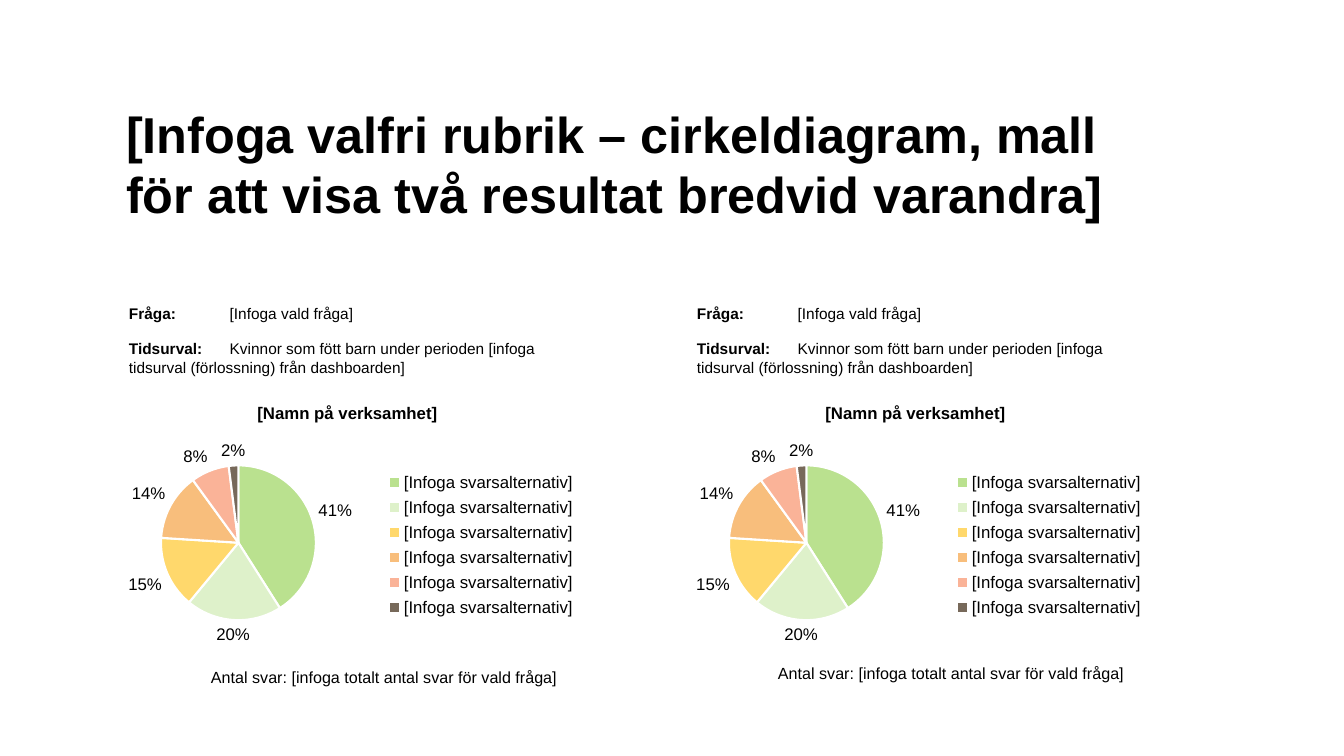
from lxml import etree
from pptx import Presentation
from pptx.chart.data import CategoryChartData
from pptx.dml.color import RGBColor
from pptx.enum.chart import XL_CHART_TYPE, XL_LABEL_POSITION, XL_LEGEND_POSITION
from pptx.enum.text import MSO_ANCHOR, MSO_AUTO_SIZE, PP_ALIGN
from pptx.oxml.ns import qn
from pptx.util import Pt

PIE = XL_CHART_TYPE.PIE
OUTSIDE_END = XL_LABEL_POSITION.OUTSIDE_END
LEGEND_BOTTOM = XL_LEGEND_POSITION.BOTTOM
TOP = MSO_ANCHOR.TOP
NO_AUTOFIT = MSO_AUTO_SIZE.NONE
LEFT, CENTER = PP_ALIGN.LEFT, PP_ALIGN.CENTER

BLACK = RGBColor(0x00, 0x00, 0x00)
WHITE = RGBColor(0xFF, 0xFF, 0xFF)
ANSWER_COLORS = [
    RGBColor(0xBA, 0xE1, 0x8F), RGBColor(0xDE, 0xF1, 0xCA), RGBColor(0xFF, 0xD8, 0x6C),
    RGBColor(0xF8, 0xBE, 0x7C), RGBColor(0xFA, 0xB3, 0x98), RGBColor(0x77, 0x69, 0x5A),
]
ANSWER_SHARES = [0.41, 0.20, 0.15, 0.14, 0.08, 0.02]
UNIT_NAME = "[Namn på verksamhet]"
QUESTION_LINES = [
    ("Fråga: \t", "[Infoga vald fråga]"),
    ("Tidsurval:\t", "Kvinnor som fött barn under perioden [infoga \ttidsurval (förlossning) från dashboarden]"),
]
PX = 914400 / 100.8


def px(*lengths):
    return [round(length * PX) for length in lengths]


def style(font, size, bold=False):
    for key, value in {"name": "Arial", "size": Pt(size), "bold": bold}.items():
        setattr(font, key, value)
    font.color.rgb = BLACK


prs = Presentation()
prs.slide_width, prs.slide_height = px(1344, 756)
slide = prs.slides.add_slide(prs.slide_layouts[5])

heading = slide.shapes.title
heading.left, heading.top, heading.width, heading.height = px(116, 98, 1014, 135)
heading.text = "[Infoga valfri rubrik – cirkeldiagram, mall för att visa två resultat bredvid varandra]"
for key, value in {"word_wrap": True, "auto_size": NO_AUTOFIT, "vertical_anchor": TOP}.items():
    setattr(heading.text_frame, key, value)
heading_line = heading.text_frame.paragraphs[0]
heading_line.alignment = LEFT
heading_line.line_spacing = 1.0
style(heading_line.runs[0].font, 36, True)

for offset, count_top in ((0, 662), (568, 658)):
    question = slide.shapes.add_textbox(*px(116 + offset, 299, 487, 79)).text_frame
    question.word_wrap = True
    for index, (label, answer) in enumerate(QUESTION_LINES):
        line = question.add_paragraph() if index else question.paragraphs[0]
        line.space_after = Pt(12)
        line._p.get_or_add_pPr().set("marL", str(px(3)[0]))
        for text, bold in ((label, True), (answer, False)):
            run = line.add_run()
            run.text = text
            style(run.font, 11, bold)

    shares = CategoryChartData(number_format="0%")
    shares.categories = ["[Infoga svarsalternativ]"] * len(ANSWER_SHARES)
    shares.add_series(UNIT_NAME, ANSWER_SHARES)
    chart = slide.shapes.add_chart(PIE, *px(104 + offset, 389, 487, 297), shares).chart
    style(chart.font, 10)

    chart.has_title = True
    chart.chart_title.text_frame.text = UNIT_NAME
    style(chart.chart_title.text_frame.paragraphs[0].runs[0].font, 12, True)

    chart.has_legend = True
    chart.legend.position = LEGEND_BOTTOM
    chart.legend.include_in_layout = False
    style(chart.legend.font, 12)

    pie = chart.plots[0]
    pie.vary_by_categories = True
    pie.has_data_labels = True
    labels = pie.data_labels
    for key, value in {
        "show_value": True, "show_percentage": False, "position": OUTSIDE_END,
        "number_format": "0%", "number_format_is_linked": False,
    }.items():
        setattr(labels, key, value)
    style(labels.font, 12)
    for index, color in enumerate(ANSWER_COLORS):
        wedge = pie.series[0].points[index].format
        wedge.fill.solid()
        wedge.fill.fore_color.rgb = color
        wedge.line.color.rgb = WHITE
        wedge.line.width = Pt(1.5)

    plot_area = chart._chartSpace.chart.plotArea
    for part, inner, box in (
        (plot_area, True, {"x": 0.117, "y": 0.219, "w": 0.318, "h": 0.598}),
        (chart.legend._element, False, {"x": 0.57, "y": 0.26, "w": 0.41, "h": 0.53}),
    ):
        layout = part.find(qn("c:layout"))
        if layout is None:
            layout = etree.Element(qn("c:layout"))
            part.insert(0 if inner else 1, layout)
        for child in list(layout):
            layout.remove(child)
        manual = etree.SubElement(layout, qn("c:manualLayout"))
        settings = [("layoutTarget", "inner")] if inner else []
        settings += [("xMode", "edge"), ("yMode", "edge"), *box.items()]
        for tag, value in settings:
            etree.SubElement(manual, qn("c:" + tag)).set("val", str(value))

    count = slide.shapes.add_textbox(*px(offset - offset // 568, count_top, 768, 29)).text_frame
    count.word_wrap = True
    count_line = count.paragraphs[0]
    count_line.text = "Antal svar: [infoga totalt antal svar för vald fråga]"
    count_line.alignment = CENTER
    style(count_line.runs[0].font, 11.5)

prs.save("out.pptx")
